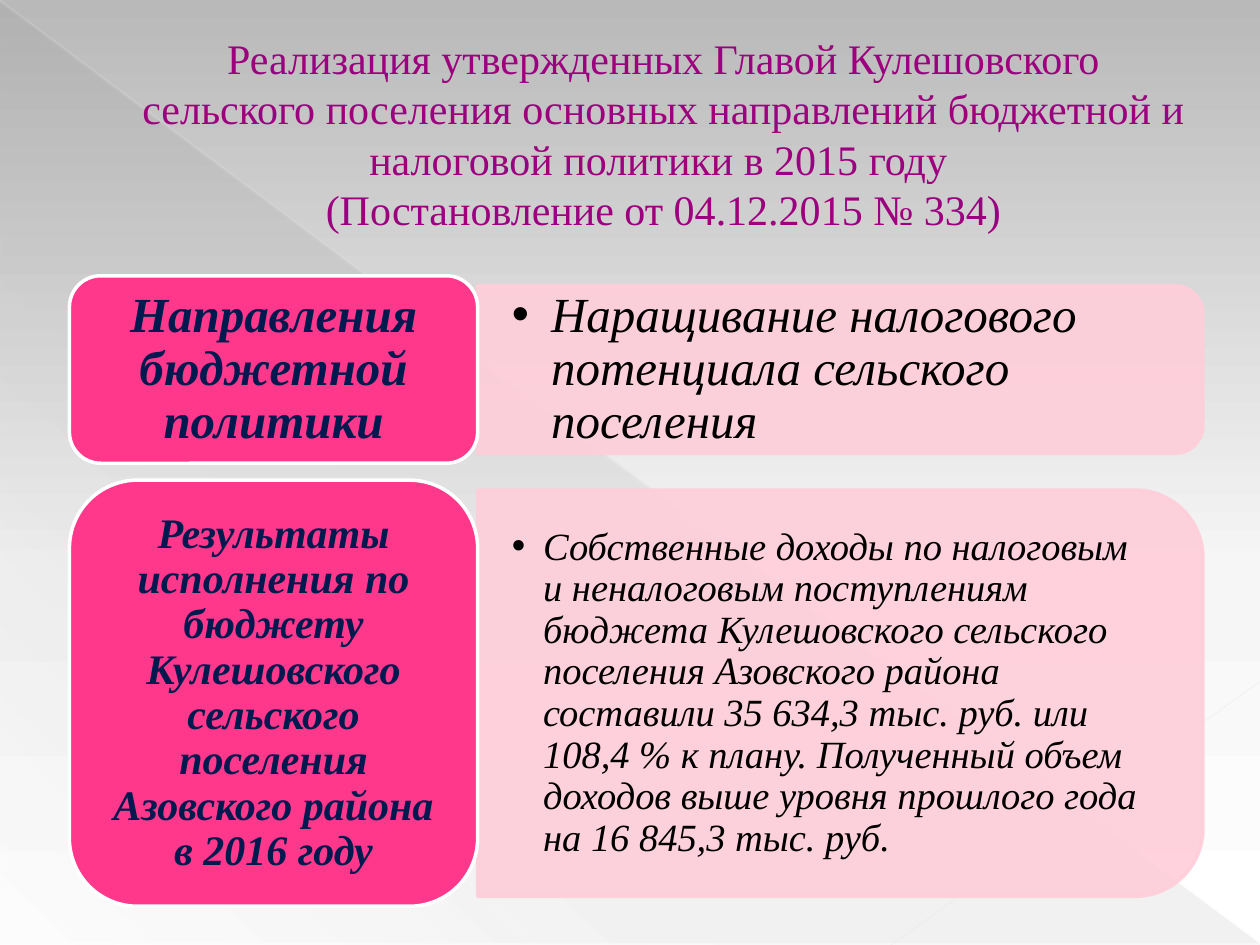
from lxml.etree import SubElement
from pptx import Presentation
from pptx.dml.color import RGBColor
from pptx.enum.shapes import MSO_CONNECTOR, MSO_SHAPE
from pptx.enum.text import MSO_ANCHOR, PP_ALIGN
from pptx.oxml.ns import qn
from pptx.util import Cm, Pt

PINK = RGBColor(0xFF, 0x38, 0x8C)
ROSE = RGBColor(0xFF, 0xCE, 0xDA)
PLUM = RGBColor(0x9C, 0x00, 0x7F)
NAVY = RGBColor(0x00, 0x1A, 0x4F)
BLACK = RGBColor(0x00, 0x00, 0x00)
WHITE = RGBColor(0xFF, 0xFF, 0xFF)
GREY = RGBColor(0x66, 0x66, 0x66)
SILVER = RGBColor(0xB9, 0xB9, 0xB9)
MIST = RGBColor(0xF6, 0xF6, 0xF6)
PALE = RGBColor(0xE8, 0xE8, 0xE8)
FONT = "Times New Roman"
ROUND = 0.16667
INSET = ROUND * 0.29


def fade(root, part):
    """Give every colour under root the opacity part, in percent."""
    for tint in root.iter(qn("a:srgbClr")):
        SubElement(tint, qn("a:alpha"), val=str(part * 1000))


def blend(fill, root, stops, angle):
    """Fill with a linear gradient of (place, colour, opacity) stops."""
    fill.gradient()
    fill.gradient_angle = 360 - angle
    holder = next(root.iter(qn("a:gsLst")))
    for old in list(holder):
        holder.remove(old)
    for place, color, part in stops:
        stop = SubElement(holder, qn("a:gs"), pos=str(place * 1000))
        SubElement(stop, qn("a:srgbClr"), val=str(color))
        fade(stop, part)


def write(shape, text, size=24, color=BLACK, bold=False, italic=False,
          align=PP_ALIGN.LEFT, space=0.9, pad=(0.25, 0.13), left=0, bullet=False):
    """Put one formatted paragraph into a shape."""
    frame = shape.text_frame
    frame.word_wrap = True
    frame.vertical_anchor = MSO_ANCHOR.MIDDLE
    frame.margin_left = frame.margin_right = Cm(pad[0])
    frame.margin_top = frame.margin_bottom = Cm(pad[1])
    para = frame.paragraphs[0]
    para.text = text
    para.alignment = align
    para.line_spacing = space
    props = para._p.get_or_add_pPr()
    props.set("marL", str(Cm(left)))
    props.set("indent", str(Cm(-left if bullet else 0)))
    if bullet:
        SubElement(props, qn("a:buFont"), typeface="Arial")
        SubElement(props, qn("a:buChar"), char="•")
    for run in para.runs:
        font = run.font
        font.name, font.size = FONT, Pt(size)
        font.bold, font.italic = bold, italic
        font.color.rgb = color


def block(slide, kind, x, y, w, h, color=None, edge=None):
    """Add a flat preset shape, with an edge if its colour is given."""
    shape = slide.shapes.add_shape(kind, Cm(x), Cm(y), Cm(w), Cm(h))
    shape.shadow.inherit = False
    if color is not None:
        shape.fill.solid()
        shape.fill.fore_color.rgb = color
    if edge is None:
        shape.line.fill.background()
    else:
        shape.line.color.rgb = edge
        shape.line.width = Pt(2)
    return shape


def stroke(slide, x1, y1, x2, y2, width, part):
    """Add a thin translucent line."""
    line = slide.shapes.add_connector(
        MSO_CONNECTOR.STRAIGHT, Cm(x1), Cm(y1), Cm(x2), Cm(y2))
    line.line.color.rgb = PALE
    line.line.width = Pt(width)
    fade(line.element, part)
    SubElement(line.element.spPr, qn("a:effectLst"))


def backdrop(slide, w, h):
    """Draw the shaded background over a w by h slide."""
    back = slide.background.fill
    blend(back, slide.element,
          [(0, SILVER, 100), (60, MIST, 100), (100, WHITE, 100)], 90)
    wedge = block(slide, MSO_SHAPE.RIGHT_TRIANGLE, 0, 0.05, w, h - 0.05)
    blend(wedge.fill, wedge.element,
          [(0, GREY, 10), (70, GREY, 8), (100, GREY, 1)], 133)
    stroke(slide, 0, 0, w, h, 0.39, 35)
    stroke(slide, w, h - 5.31, w - 7.44, h, 0.47, 45)


def header(slide, x, y, w, h, text):
    """Place the slide heading."""
    box = slide.shapes.add_textbox(Cm(x), Cm(y), Cm(w), Cm(h))
    write(box, text, color=PLUM, align=PP_ALIGN.CENTER, space=1.0,
          pad=(0.2, 0.13), left=1.35)


def panel(slide, x, y, w, h, text, size, hang):
    """Place a panel rounded on its right side, with a bulleted text."""
    shape = block(slide, MSO_SHAPE.ROUND_2_SAME_RECTANGLE,
                  x + (w - h) / 2, y + (h - w) / 2, h, w, ROSE, ROSE)
    shape.rotation = 90
    fade(shape.element, 90)
    gap = INSET * h
    box = slide.shapes.add_textbox(Cm(x), Cm(y + gap), Cm(w - gap), Cm(h - 2 * gap))
    write(box, text, size=size, italic=True, pad=(0.69, 0.36),
          left=hang, bullet=True)


def row(slide, x, y, w, h, label, text, sizes, hang):
    """Place a label card and the panel to its right."""
    side, gap = 8.23, 0.2
    panel(slide, x + side, y + gap, w - side, h - 2 * gap, text, sizes[1], hang)
    card = block(slide, MSO_SHAPE.ROUNDED_RECTANGLE, x, y, side, h, PINK, WHITE)
    write(card, label, size=sizes[0], color=NAVY, bold=True, italic=True,
          align=PP_ALIGN.CENTER)


def main():
    """Build the slide and save it."""
    deck = Presentation()
    deck.slide_width, deck.slide_height = Cm(25.4), Cm(19.05)
    slide = deck.slides.add_slide(deck.slide_layouts[6])
    backdrop(slide, 25.4, 19.05)
    header(slide, 1.27, 0.74, 22.86, 3.89,
           "Реализация утвержденных Главой Кулешовского сельского поселения "
           "основных направлений бюджетной и налоговой политики в 2015 году \v"
           "(Постановление от 04.12.2015 № 334)")
    row(slide, 1.4, 5.56, 22.85, 3.78,
        "Направления бюджетной политики",
        "Наращивание налогового потенциала сельского поселения",
        (28, 28), 0.79)
    row(slide, 1.4, 9.68, 22.85, 8.59,
        "Результаты исполнения по бюджету Кулешовского сельского поселения "
        "Азовского района в 2016 году",
        "Собственные доходы по налоговым и неналоговым поступлениям бюджета "
        "Кулешовского сельского поселения Азовского района составили "
        "35 634,3 тыс. руб. или 108,4 % к плану. Полученный объем доходов "
        "выше уровня прошлого года на 16 845,3 тыс. руб.",
        (24, 22), 0.63)
    deck.save("out.pptx")


if __name__ == "__main__":
    main()
